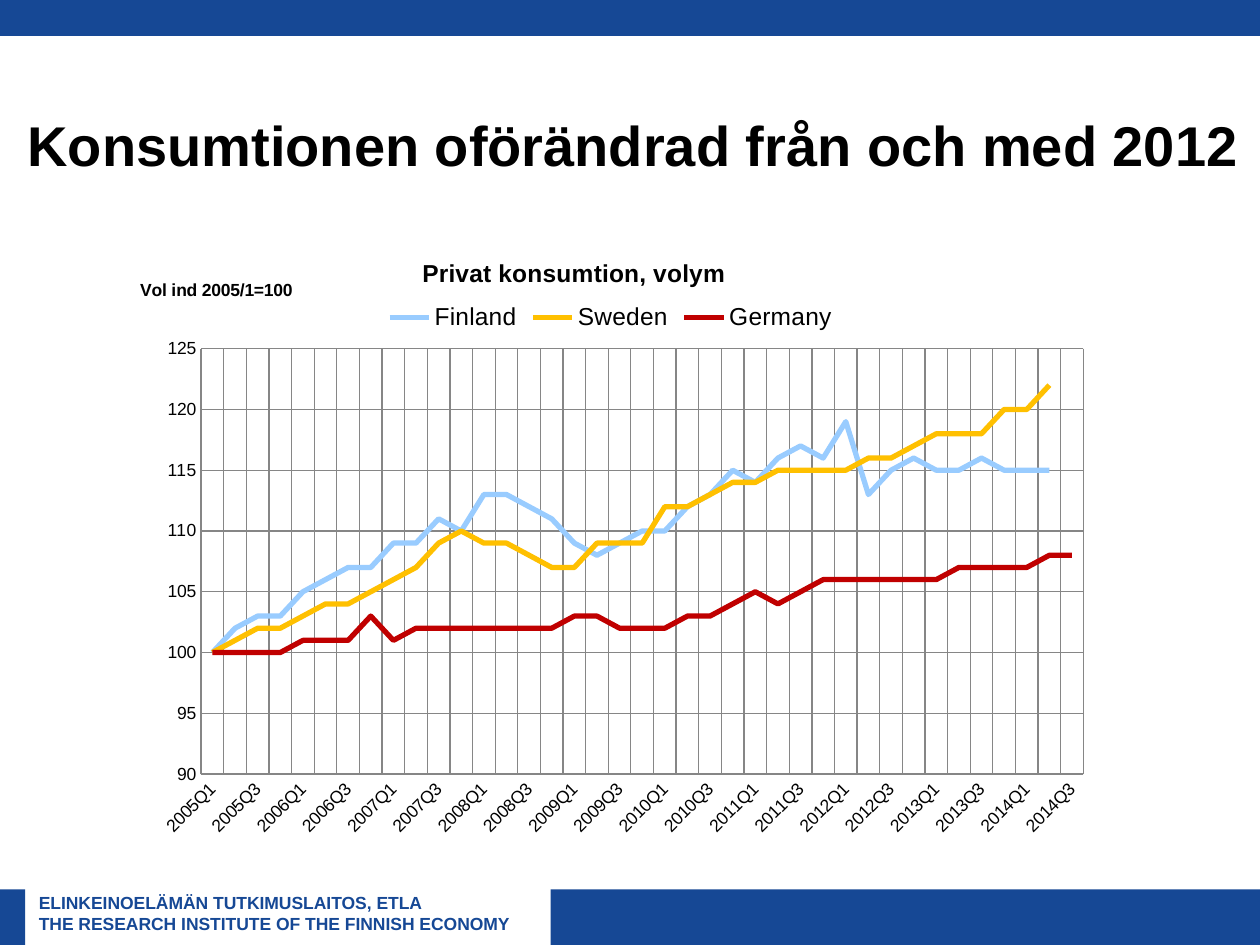
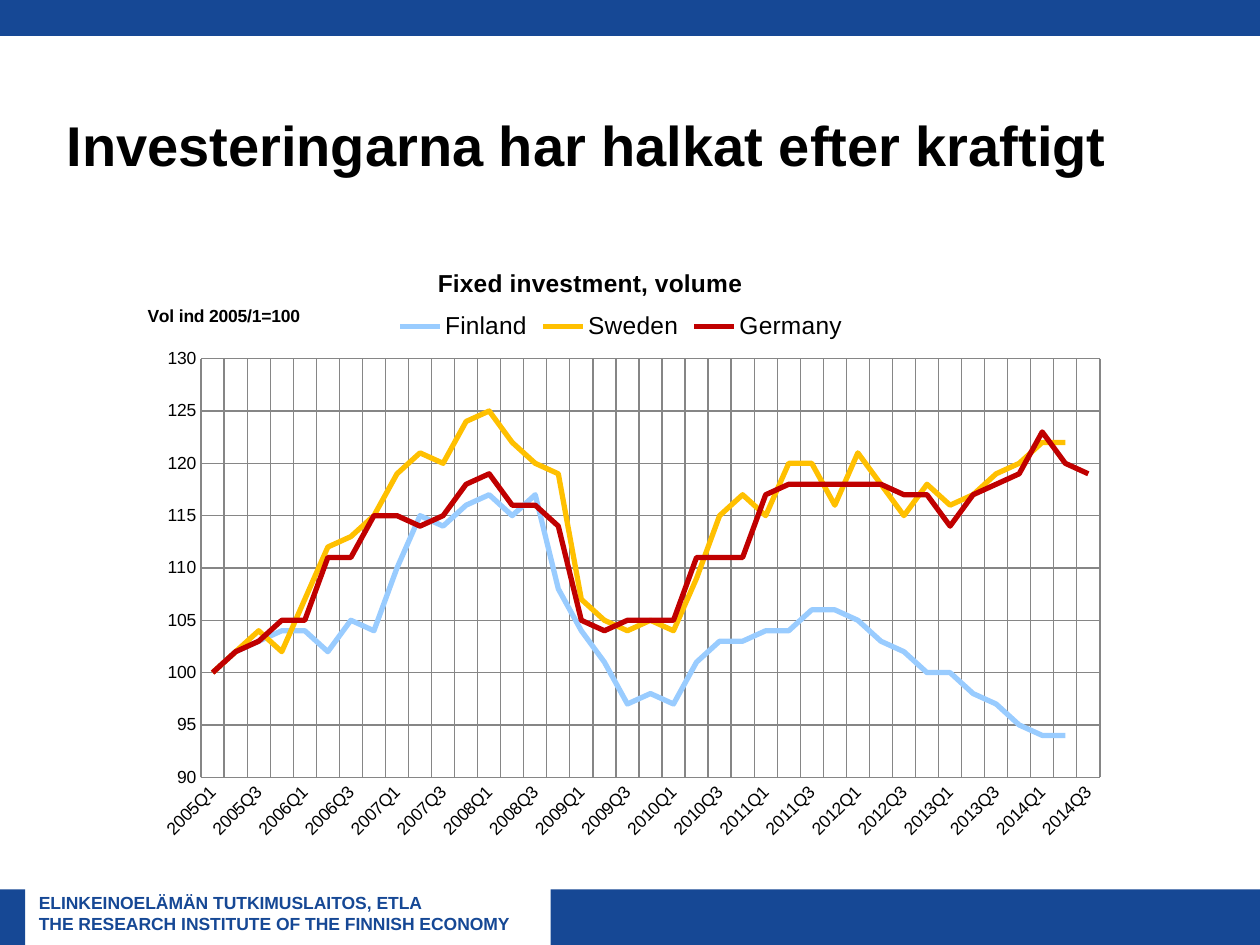
import collections

import lxml.etree
import pptx
import pptx.chart.data
import pptx.dml.color
import pptx.enum.chart
import pptx.enum.shapes
import pptx.enum.text
import pptx.oxml.ns
import pptx.util

RGBColor = pptx.dml.color.RGBColor
BLUE = RGBColor(0x16, 0x48, 0x95)
BLACK = RGBColor(0, 0, 0)
GRID_GREY = RGBColor(0x86, 0x86, 0x86)
SERIES_COLOURS = {
    "Finland": RGBColor(0x99, 0xCC, 0xFF),
    "Sweden": RGBColor(0xFF, 0xC0, 0x00),
    "Germany ": RGBColor(0xC0, 0x00, 0x00),
}
FONT = "Arial"
SLIDE_WIDTH = pptx.util.Inches(10)
SLIDE_HEIGHT = pptx.util.Inches(7.5)

Box = collections.namedtuple("Box", "left top width height")
Layout = collections.namedtuple("Layout", "plot title legend axis_title")
SLIDE_BOX = Box(0, 0, SLIDE_WIDTH, SLIDE_HEIGHT)
QUARTERS = [f"{year}Q{quarter}" for year in range(2005, 2015) for quarter in range(1, 5)][:-1]

CONSUMPTION = {
    "Finland": [100, 102, 103, 103, 105, 106, 107, 107, 109, 109, 111, 110, 113,
                113, 112, 111, 109, 108, 109, 110, 110, 112, 113, 115, 114, 116,
                117, 116, 119, 113, 115, 116, 115, 115, 116, 115, 115, 115, None],
    "Sweden": [100, 101, 102, 102, 103, 104, 104, 105, 106, 107, 109, 110, 109,
               109, 108, 107, 107, 109, 109, 109, 112, 112, 113, 114, 114, 115,
               115, 115, 115, 116, 116, 117, 118, 118, 118, 120, 120, 122, None],
    "Germany ": [100, 100, 100, 100, 101, 101, 101, 103, 101, 102, 102, 102, 102,
                 102, 102, 102, 103, 103, 102, 102, 102, 103, 103, 104, 105, 104,
                 105, 106, 106, 106, 106, 106, 106, 107, 107, 107, 107, 108, 108],
}
INVESTMENT = {
    "Finland": [100, 102, 103, 104, 104, 102, 105, 104, 110, 115, 114, 116, 117,
                115, 117, 108, 104, 101, 97, 98, 97, 101, 103, 103, 104, 104,
                106, 106, 105, 103, 102, 100, 100, 98, 97, 95, 94, 94, None],
    "Sweden": [100, 102, 104, 102, 107, 112, 113, 115, 119, 121, 120, 124, 125,
               122, 120, 119, 107, 105, 104, 105, 104, 109, 115, 117, 115, 120,
               120, 116, 121, 118, 115, 118, 116, 117, 119, 120, 122, 122, None],
    "Germany ": [100, 102, 103, 105, 105, 111, 111, 115, 115, 114, 115, 118, 119,
                 116, 116, 114, 105, 104, 105, 105, 105, 111, 111, 111, 117, 118,
                 118, 118, 118, 118, 117, 117, 114, 117, 118, 119, 123, 120, 119],
}


def share(box, left, top, width, height):
    return Box(
        round(box.left + left / 100 * box.width),
        round(box.top + top / 100 * box.height),
        round(width / 100 * box.width),
        round(height / 100 * box.height),
    )


def style_font(font, size, bold=False, colour=BLACK):
    font.name = FONT
    font.size = pptx.util.Pt(size)
    font.bold = bold
    font.color.rgb = colour


def add_text(page, box, lines, size, colour, anchor):
    frame = page.shapes.add_textbox(*box).text_frame
    frame.word_wrap = True
    frame.vertical_anchor = anchor
    for number, line in enumerate(lines):
        para = frame.add_paragraph() if number else frame.paragraphs[0]
        para.text = line
        style_font(para.font, size, True, colour)


def add_bands(page, box):
    bands = [(43.7, 94.13, 56.3, 5.87), (0, 0, 100, 3.8), (0, 94.13, 2, 5.87)]
    for place in bands:
        band = page.shapes.add_shape(
            pptx.enum.shapes.MSO_SHAPE.RECTANGLE, *share(box, *place))
        band.shadow.inherit = False
        band.fill.solid()
        band.fill.fore_color.rgb = BLUE
        band.line.fill.background()
    add_text(
        page, share(box, 2.1, 93.73, 41.7, 5.73),
        ["ELINKEINOELÄMÄN TUTKIMUSLAITOS, ETLA",
         "THE RESEARCH INSTITUTE OF THE FINNISH ECONOMY"],
        10, BLUE, pptx.enum.text.MSO_ANCHOR.TOP)


def add_xml(parent, index, tag, value=None):
    child = lxml.etree.Element(pptx.oxml.ns.qn(f"c:{tag}"))
    if value is not None:
        child.set("val", str(value))
    parent.insert(index, child)
    return child


def place_part(part, index, place, inner=False):
    for old in part.findall(pptx.oxml.ns.qn("c:layout")):
        part.remove(old)
    manual = add_xml(add_xml(part, index, "layout"), 0, "manualLayout")
    settings = [("layoutTarget", "inner")] if inner else []
    settings += [("xMode", "edge"), ("yMode", "edge")]
    settings += zip("xywh", place)
    for position, (tag, value) in enumerate(settings):
        add_xml(manual, position, tag, value)


def write_title(owner, text, size, place):
    frame = owner.text_frame
    frame.text = text
    style_font(frame.paragraphs[0].font, size, True)
    element = owner._element
    body = element.find(".//" + pptx.oxml.ns.qn("a:bodyPr"))
    body.set("rot", "0")
    body.set("vert", "horz")
    place_part(element, 1, place)
    overlay = element.find(pptx.oxml.ns.qn("c:overlay"))
    if overlay is not None:
        overlay.set("val", "1")


def style_axis(axis):
    axis.has_major_gridlines = True
    axis.major_tick_mark = pptx.enum.chart.XL_TICK_MARK.INSIDE
    axis.minor_tick_mark = pptx.enum.chart.XL_TICK_MARK.NONE
    style_font(axis.tick_labels.font, 10)
    for line in (axis.major_gridlines.format.line, axis.format.line):
        line.color.rgb = GRID_GREY
        line.width = pptx.util.Pt(0.75)


def style_axes(chart, highest, axis_title_place):
    values, quarters = chart.value_axis, chart.category_axis
    style_axis(values)
    style_axis(quarters)
    values.minimum_scale = 90
    values.maximum_scale = highest
    values.major_unit = 5
    values.tick_labels.number_format = "0"
    values.tick_labels.number_format_is_linked = False
    write_title(values.axis_title, "Vol ind 2005/1=100", 10, axis_title_place)
    element = quarters._element
    body = element.find(pptx.oxml.ns.qn("c:txPr")).find(pptx.oxml.ns.qn("a:bodyPr"))
    body.set("rot", "-2700000")
    body.set("vert", "horz")
    last = element.index(element.find(pptx.oxml.ns.qn("c:noMultiLvlLbl")))
    add_xml(element, last, "tickLblSkip", 2)
    add_xml(element, last + 1, "tickMarkSkip", 1)


def add_index_chart(page, box, title, series_values, highest, layout):
    data = pptx.chart.data.CategoryChartData()
    data.categories = QUARTERS
    for country, values in series_values.items():
        data.add_series(country, values)
    chart = page.shapes.add_chart(
        pptx.enum.chart.XL_CHART_TYPE.LINE, *box, data).chart
    style_font(chart.font, 10)
    chart.has_title = True
    write_title(chart.chart_title, title, 14, layout.title)
    chart.has_legend = True
    chart.legend.position = pptx.enum.chart.XL_LEGEND_POSITION.TOP
    chart.legend.include_in_layout = False
    style_font(chart.legend.font, 14)
    place_part(chart.legend._element, 1, layout.legend)
    style_axes(chart, highest, layout.axis_title)
    plot = chart.plots[0]
    plot.vary_by_categories = False
    for series in plot.series:
        series.smooth = False
        series.format.line.color.rgb = SERIES_COLOURS[series.name]
        series.format.line.width = pptx.util.Pt(3)
    plot_area = chart._chartSpace.find(".//" + pptx.oxml.ns.qn("c:plotArea"))
    place_part(plot_area, 0, layout.plot, inner=True)


def add_chart_slide(deck, heading, heading_place, chart_place, *chart_parts):
    page = deck.slides.add_slide(deck.slide_layouts[6])
    add_bands(page, SLIDE_BOX)
    add_text(page, share(SLIDE_BOX, *heading_place), [heading], 32, BLACK,
             pptx.enum.text.MSO_ANCHOR.MIDDLE)
    add_index_chart(page, share(SLIDE_BOX, *chart_place), *chart_parts)


def main():
    deck = pptx.Presentation()
    deck.slide_width = SLIDE_WIDTH
    deck.slide_height = SLIDE_HEIGHT
    add_chart_slide(
        deck, "Konsumtionen oförändrad från och med 2012",
        (1.2, 6.93, 98.8, 16.67), (9, 23.73, 81.9, 67.2),
        "Privat konsumtion, volym", CONSUMPTION, 125,
        Layout(plot=(0.085, 0.196, 0.855, 0.67), title=(0.295, 0.045),
               legend=(0.26, 0.117), axis_title=(0.023, 0.08)))
    add_chart_slide(
        deck, "Investeringarna har halkat efter kraftigt",
        (4.3, 6.93, 92.9, 16.67), (9, 24.8, 81.9, 66.13),
        "Fixed investment, volume", INVESTMENT, 130,
        Layout(plot=(0.085, 0.199, 0.871, 0.67), title=(0.31, 0.045),
               legend=(0.27, 0.117), axis_title=(0.03, 0.107)))
    deck.save("out.pptx")


if __name__ == "__main__":
    main()
